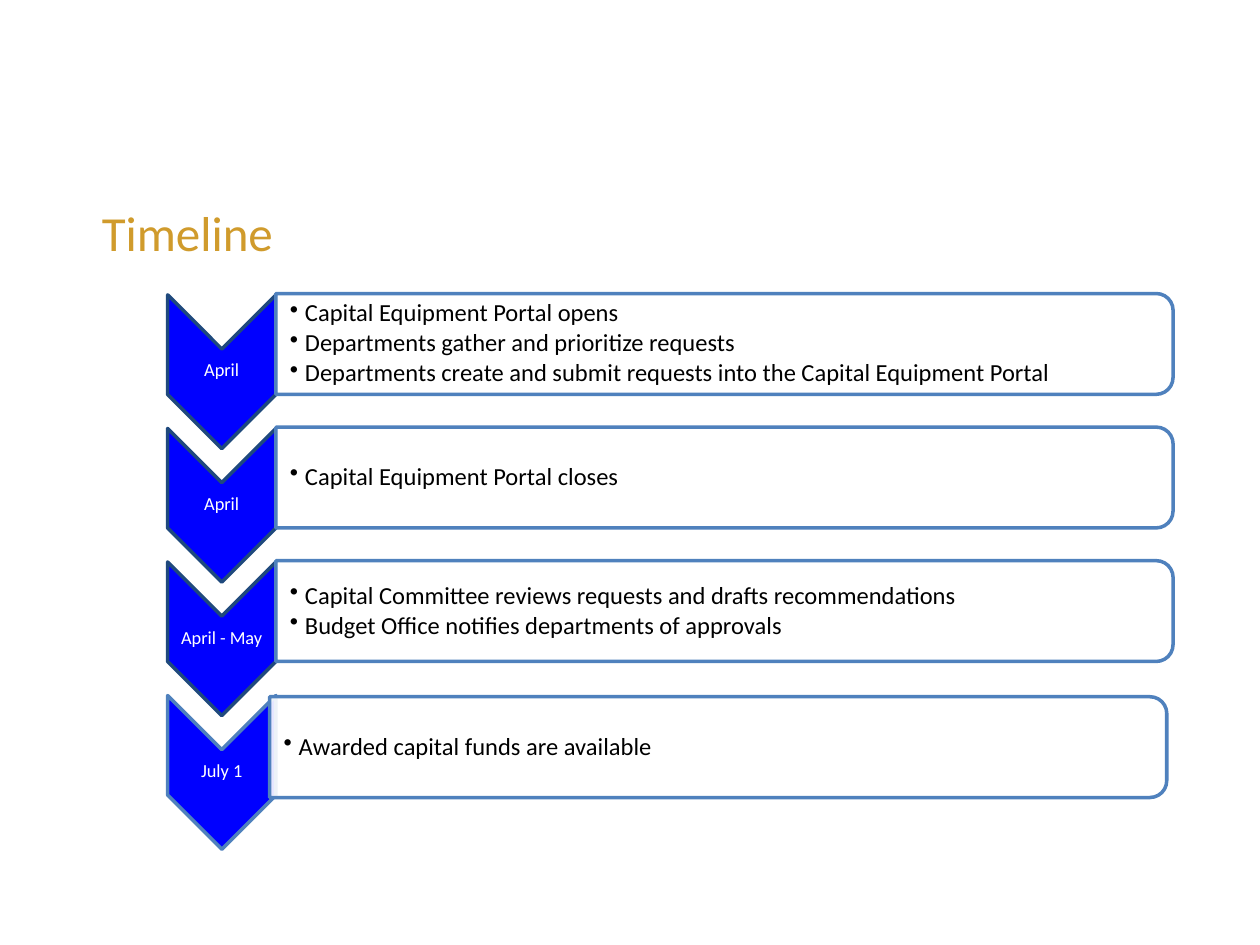
from dataclasses import dataclass

from lxml import etree
from pptx import Presentation
from pptx.dml.color import RGBColor
from pptx.enum.shapes import MSO_SHAPE
from pptx.enum.text import MSO_ANCHOR, PP_ALIGN
from pptx.oxml.ns import qn
from pptx.shapes.autoshape import Shape
from pptx.slide import Slide
from pptx.util import Inches, Pt

CHEVRON = MSO_SHAPE.CHEVRON
ROUNDED_PANEL = MSO_SHAPE.ROUND_2_SAME_RECTANGLE
MIDDLE = MSO_ANCHOR.MIDDLE
TOP = MSO_ANCHOR.TOP
LEFT = PP_ALIGN.LEFT
CENTER = PP_ALIGN.CENTER

GOLD = RGBColor(0xD0, 0x9B, 0x2C)
BLUE = RGBColor(0x00, 0x00, 0xFF)
NAVY = RGBColor(0x1F, 0x49, 0x7D)
STEEL = RGBColor(0x4F, 0x81, 0xBD)
WHITE = RGBColor(0xFF, 0xFF, 0xFF)
BLACK = RGBColor(0x00, 0x00, 0x00)

FONT = "Calibri"
FIRST_CENTER = 2.95
STEP_PITCH = 1.06
CHEVRON_CENTER = 1.76
CHEVRON_LENGTH = 1.22
CHEVRON_WIDTH = 0.86
PANEL_LEFT = 2.19
PANEL_RISE = 0.22
PANEL_LENGTH = 7.12
PANEL_HEIGHT = 0.8
BULLET_INDENT = 0.12


@dataclass(frozen=True)
class Step:
    date: str
    tasks: tuple[str, ...]
    outline: RGBColor = NAVY
    shift_x: float = 0
    shift_y: float = 0


STEPS = (
    Step("April", (
        "Capital Equipment Portal opens",
        "Departments gather and prioritize requests",
        "Departments create and submit requests into the Capital Equipment Portal",
    )),
    Step("April", ("Capital Equipment Portal closes",)),
    Step("April - May", (
        "Capital Committee reviews requests and drafts recommendations",
        "Budget Office notifies departments of approvals",
    )),
    Step("July 1", ("Awarded capital funds are available",), STEEL, -0.05, 0.02),
)


def add_text(slide: Slide, lines: tuple[str, ...], left: float, top: float,
             width: float, height: float, *, size: float, color: RGBColor,
             align: PP_ALIGN = LEFT, anchor: MSO_ANCHOR = MIDDLE,
             left_inset: float = 0.01, inset: float = 0.01,
             line_spacing: float = 0.9, space_after: float = 0,
             bulleted: bool = False) -> None:
    box = slide.shapes.add_textbox(Inches(left), Inches(top), Inches(width), Inches(height))
    frame = box.text_frame
    frame.word_wrap = True
    frame.vertical_anchor = anchor
    frame.margin_left = Inches(left_inset)
    frame.margin_top = frame.margin_right = frame.margin_bottom = Inches(inset)
    for index, line in enumerate(lines):
        paragraph = frame.paragraphs[0] if index == 0 else frame.add_paragraph()
        paragraph.alignment = align
        paragraph.line_spacing = line_spacing
        paragraph.space_after = Pt(space_after)
        if bulleted:
            properties = paragraph._p.get_or_add_pPr()
            properties.set("marL", str(Inches(BULLET_INDENT)))
            properties.set("indent", str(-Inches(BULLET_INDENT)))
            etree.SubElement(properties, qn("a:buChar")).set("char", "•")
        run = paragraph.add_run()
        run.text = line
        run.font.name = FONT
        run.font.size = Pt(size)
        run.font.color.rgb = color


def add_turned_shape(slide: Slide, kind: MSO_SHAPE, center_x: float, center_y: float,
                     width: float, height: float, fill: RGBColor,
                     outline: RGBColor) -> Shape:
    shape = slide.shapes.add_shape(
        kind, Inches(center_x - width / 2), Inches(center_y - height / 2),
        Inches(width), Inches(height))
    shape.rotation = 90
    shape.shadow.inherit = False
    shape.fill.solid()
    shape.fill.fore_color.rgb = fill
    shape.line.color.rgb = outline
    shape.line.width = Pt(2)
    return shape


def set_opacity(shape: Shape, percent: int) -> None:
    color = shape._element.spPr.find(qn("a:solidFill")).find(qn("a:srgbClr"))
    etree.SubElement(color, qn("a:alpha")).set("val", str(percent * 1000))


def add_step(slide: Slide, step: Step, center_y: float) -> None:
    add_turned_shape(slide, CHEVRON, CHEVRON_CENTER, center_y,
                     CHEVRON_LENGTH, CHEVRON_WIDTH, BLUE, step.outline)
    add_text(slide, (step.date,), CHEVRON_CENTER - CHEVRON_WIDTH / 2, center_y - 0.19,
             CHEVRON_WIDTH, 0.37, size=10.5, color=WHITE, align=CENTER)
    panel_left = PANEL_LEFT + step.shift_x
    panel_center = center_y - PANEL_RISE + step.shift_y
    panel = add_turned_shape(slide, ROUNDED_PANEL, panel_left + PANEL_LENGTH / 2,
                             panel_center, PANEL_HEIGHT, PANEL_LENGTH, WHITE, STEEL)
    set_opacity(panel, 90)
    add_text(slide, step.tasks, panel_left, panel_center - 0.36, 7.08, 0.72,
             size=14, color=BLACK, left_inset=0.11, space_after=2, bulleted=True)


def main() -> None:
    presentation = Presentation()
    presentation.slide_width = Inches(10)
    presentation.slide_height = Inches(7.5)
    slide = presentation.slides.add_slide(presentation.slide_layouts[6])
    add_text(slide, ("Timeline",), 0.71, 1.56, 6.18, 0.57, size=28, color=GOLD,
             anchor=TOP, left_inset=0.1, inset=0.05, line_spacing=1.0)
    for index, step in enumerate(STEPS):
        add_step(slide, step, FIRST_CENTER + index * STEP_PITCH)
    presentation.save("out.pptx")


if __name__ == "__main__":
    main()
